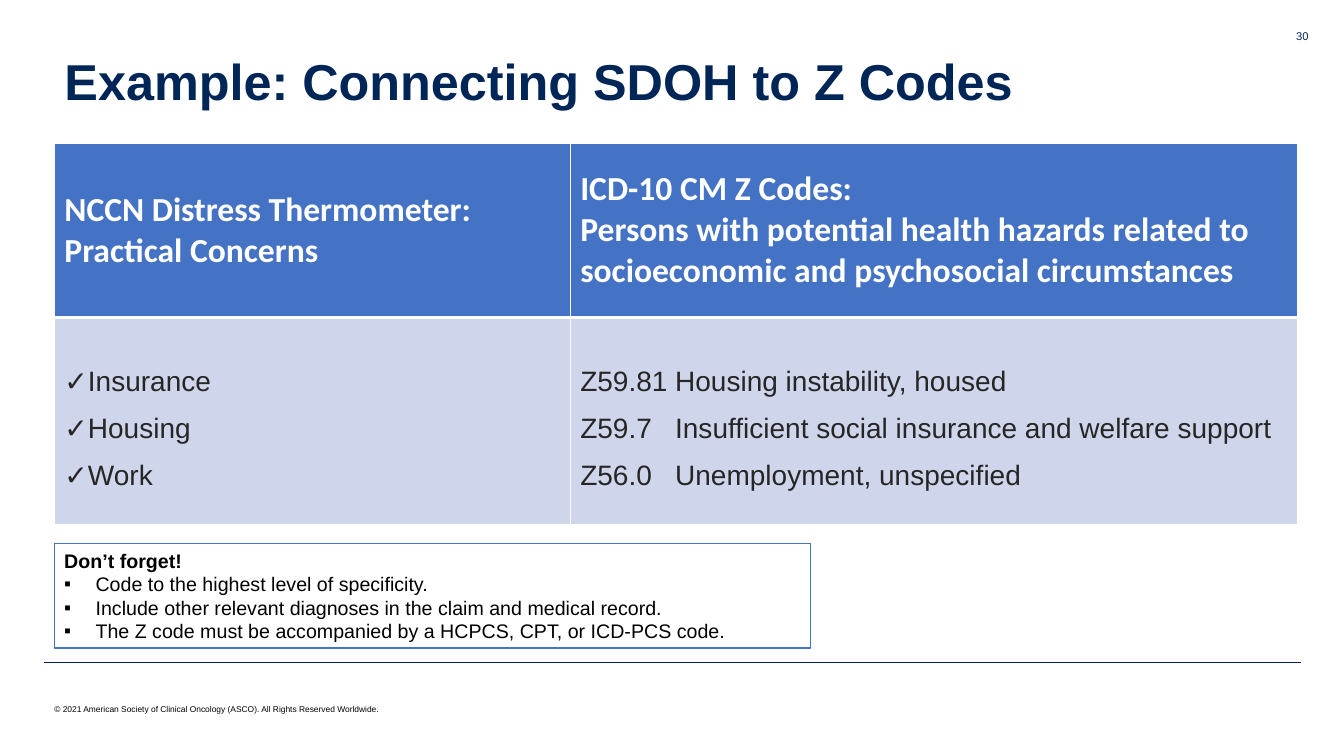
"""Build the slide that links SDOH concerns to Z codes."""
from lxml import etree
from pptx import Presentation
from pptx.dml.color import RGBColor
from pptx.enum import shapes, text
from pptx.oxml import ns
from pptx.util import Cm, Pt

NAVY, BLUE, PALE, WHITE, BLACK, GREY = "002557", "4472C4", "CFD5EA", "FFFFFF", "000000", "262626"
TITLE = "Example: Connecting SDOH to Z Codes"
HEADERS = [
    ["NCCN Distress Thermometer:", "Practical Concerns"],
    ["ICD-10 CM Z Codes:",
     "Persons with potential health hazards related to socioeconomic and psychosocial circumstances"],
]
CONCERNS = ["Insurance", "Housing", "Work"]
CODES = [
    ("Z59.81", "Housing instability, housed"),
    ("Z59.7", "Insufficient social insurance and welfare support"),
    ("Z56.0", "Unemployment, unspecified"),
]
REMINDER = "Don’t forget!"
TIPS = [
    "Code to the highest level of specificity.",
    "Include other relevant diagnoses in the claim and medical record.",
    "The Z code must be accompanied by a HCPCS, CPT, or ICD-PCS code.",
]
COPYRIGHT = "© 2021 American Society of Clinical Oncology (ASCO). All Rights Reserved Worldwide."
PAGE = "30"
LEFT = 1.37
COLUMNS, ROWS = (13.0, 18.34), (4.39, 5.21)


def rgb(value):
    return RGBColor.from_string(value)


def add(parent, tag, **attrs):
    return etree.SubElement(parent, ns.qn(tag), {k: str(v) for k, v in attrs.items()})


def bullet(p, char, indent=0):
    pPr = p._p.get_or_add_pPr()
    pPr.set("marL", str(Cm(indent)))
    pPr.set("indent", str(-Cm(indent)))
    add(pPr, "a:buFont", typeface="Arial")
    add(pPr, "a:buChar", char=char)


def tab_stop(p, position):
    tabs = add(p._p.get_or_add_pPr(), "a:tabLst")
    add(tabs, "a:tab", pos=Cm(position), algn="l")


def style(p, size, color, bold=False, name="Arial"):
    font = p.font
    font.size, font.bold, font.name = Pt(size), bold, name
    font.color.rgb = rgb(color)


def write(tf, lines):
    tf.text = "\n".join(lines)
    return tf.paragraphs


def add_label(s, box, content, size, color, anchor, align):
    tf = s.shapes.add_textbox(*map(Cm, box)).text_frame
    tf.word_wrap, tf.vertical_anchor = True, anchor
    p = write(tf, [content])[0]
    p.alignment = align
    style(p, size, color)


def format_cell(cell, fill, bottom):
    tcPr = cell._tc.get_or_add_tcPr()
    for side, width in (("L", 1), ("R", 1), ("T", 1), ("B", bottom)):
        ln = add(tcPr, f"a:ln{side}", w=Pt(width))
        add(add(ln, "a:solidFill"), "a:srgbClr", val=WHITE)
    cell.fill.solid()
    cell.fill.fore_color.rgb = rgb(fill)
    cell.vertical_anchor = text.MSO_ANCHOR.MIDDLE


def add_codes_table(s):
    table = s.shapes.add_table(2, 2, Cm(LEFT), Cm(3.61), Cm(sum(COLUMNS)), Cm(sum(ROWS))).table
    for column, width in zip(table.columns, COLUMNS):
        column.width = Cm(width)
    for row, height in zip(table.rows, ROWS):
        row.height = Cm(height)
    body = [CONCERNS, ["\t".join(code) for code in CODES]]
    for c in range(2):
        head, cell = table.cell(0, c), table.cell(1, c)
        format_cell(head, BLUE, 3)
        format_cell(cell, PALE, 1)
        for p in write(head.text_frame, HEADERS[c]):
            style(p, 24, WHITE, True, "Calibri")
        for p in write(cell.text_frame, body[c]):
            p.line_spacing = 1.5
            if c == 0:
                bullet(p, "✓")
            else:
                tab_stop(p, 2.39)
            style(p, 20, GREY)


def add_reminder(s):
    sp = s.shapes.add_shape(shapes.MSO_SHAPE.RECTANGLE, Cm(LEFT), Cm(13.69), Cm(19.05), Cm(2.64))
    sp.shadow.inherit = False
    sp.fill.solid()
    sp.fill.fore_color.rgb = rgb(WHITE)
    sp.line.color.rgb = rgb(BLUE)
    sp.line.width = Pt(1)
    tf = sp.text_frame
    tf.word_wrap, tf.vertical_anchor = True, text.MSO_ANCHOR.MIDDLE
    tf.auto_size = text.MSO_AUTO_SIZE.SHAPE_TO_FIT_TEXT
    for i, p in enumerate(write(tf, [REMINDER] + TIPS)):
        p.alignment = text.PP_ALIGN.LEFT
        if i:
            bullet(p, "▪", 0.79)
        style(p, 14, BLACK, i == 0)


def add_title(s):
    sp = s.shapes.title
    sp.left, sp.top, sp.width, sp.height = map(Cm, (LEFT, 1.02, 30.18, 2.18))
    tf = sp.text_frame
    tf.auto_size, tf.vertical_anchor = text.MSO_AUTO_SIZE.NONE, text.MSO_ANCHOR.MIDDLE
    p = write(tf, [TITLE])[0]
    p.alignment, p.line_spacing = text.PP_ALIGN.LEFT, 0.9
    style(p, 36, NAVY, True)


def add_rule(s):
    rule = s.shapes.add_connector(shapes.MSO_CONNECTOR.STRAIGHT, Cm(1.12), Cm(16.69), Cm(32.79), Cm(16.69))
    rule.line.color.rgb = rgb(NAVY)
    rule.line.width = Pt(0.25)
    add(rule._element.spPr, "a:effectLst")


def main():
    prs = Presentation()
    prs.slide_width, prs.slide_height = Cm(33.87), Cm(19.05)
    s = prs.slides.add_slide(prs.slide_layouts[5])
    add_rule(s)
    add_title(s)
    add_label(s, (1.12, 17.37, 11.43, 1.02), COPYRIGHT, 6, BLACK,
              text.MSO_ANCHOR.MIDDLE, text.PP_ALIGN.LEFT)
    add_label(s, (30.84, 0.61, 2.39, 1.02), PAGE, 8, NAVY,
              text.MSO_ANCHOR.TOP, text.PP_ALIGN.RIGHT)
    add_reminder(s)
    add_codes_table(s)
    prs.save("out.pptx")


if __name__ == "__main__":
    main()
